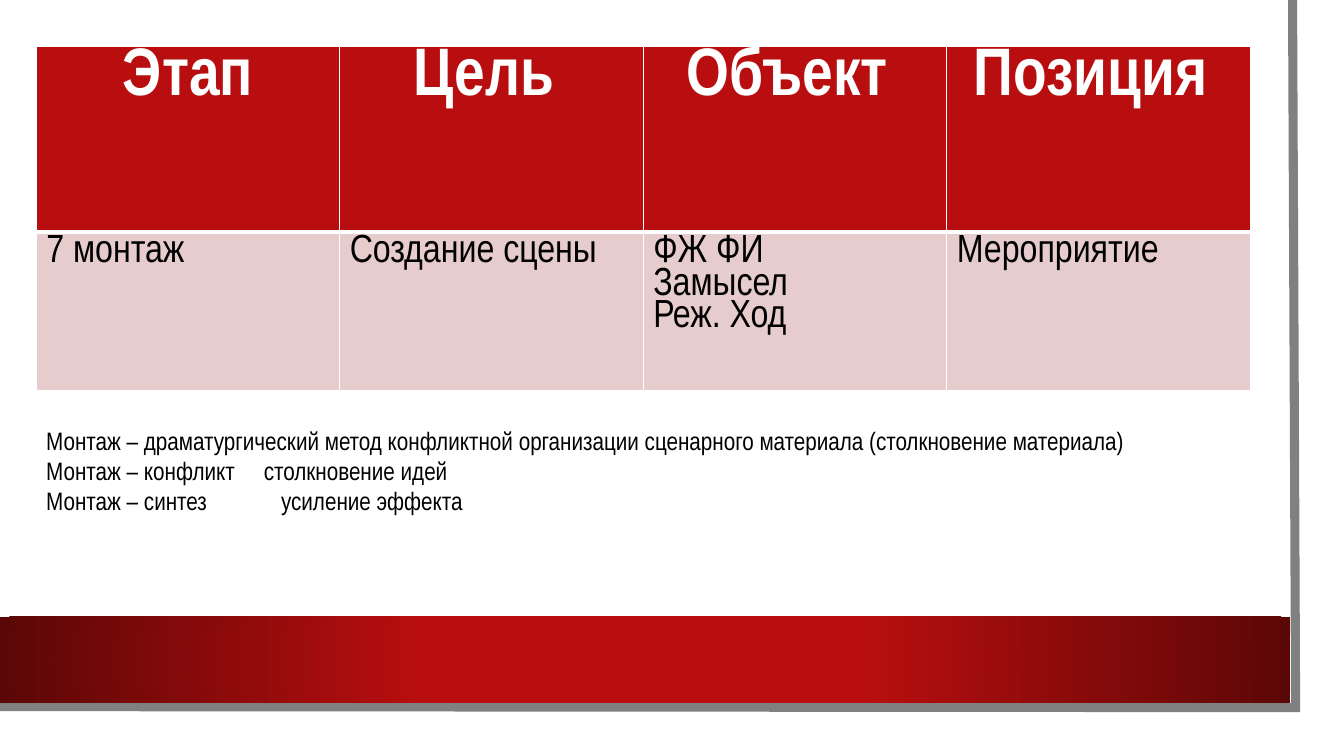
import pptx
import pptx.util
import pptx.dml.color
import pptx.enum.shapes
import pptx.enum.text
import pptx.oxml
import pptx.oxml.ns

Inches = pptx.util.Inches
Pt = pptx.util.Pt
RGB = pptx.dml.color.RGBColor.from_string
ALIGN = pptx.enum.text.PP_ALIGN
RECTANGLE = pptx.enum.shapes.MSO_SHAPE.RECTANGLE
NAMESPACE = pptx.oxml.ns.nsdecls("a")
COLORS = {
    "white": "FFFFFF",
    "black": "000000",
    "frame": "808080",
    "red": "B80E0F",
    "dark red": "5C0707",
    "pink": "E6CCCC",
}


def write(frame, lines, size, color, bold=False, align=ALIGN.LEFT, spacing=None, tabs=()):
    """Fill a text frame with one paragraph per line; tabs gives each line's tab stop in inches."""
    frame.word_wrap = True
    for index, line in enumerate(lines):
        para = frame.paragraphs[0] if index == 0 else frame.add_paragraph()
        para.alignment = align
        if spacing:
            para.line_spacing = spacing
        if tabs and tabs[index]:
            para._p.get_or_add_pPr().append(pptx.oxml.parse_xml(
                f'<a:tabLst {NAMESPACE}><a:tab pos="{Inches(tabs[index])}" algn="l"/></a:tabLst>'))
        span = para.add_run()
        span.text = line
        span.font.name = "Arial Narrow"
        span.font.size = Pt(size)
        span.font.bold = bold
        span.font.color.rgb = RGB(COLORS[color])


deck = pptx.Presentation()
deck.slide_width, deck.slide_height = Inches(13.33), Inches(7.5)
page = deck.slides.add_slide(deck.slide_layouts[6])

# White sheet
sheet = page.shapes.add_shape(RECTANGLE, 0, 0, Inches(13.1), Inches(7.27))
sheet.shadow.inherit = False
sheet.fill.solid()
sheet.fill.fore_color.rgb = RGB(COLORS["white"])
sheet.line.fill.background()

# Grey edge along the right and bottom sides
outline = page.shapes.build_freeform(Inches(12.82), 0)
outline.add_line_segments(
    [(Inches(12.85), Inches(7.02)), (Inches(-0.03), Inches(7.01))], close=False)
edge = outline.convert_to_shape()
edge.shadow.inherit = False
edge.fill.background()
edge.line.color.rgb = RGB(COLORS["frame"])
edge.line.width = Pt(6.5)
edge.line._get_or_add_ln().append(pptx.oxml.parse_xml(f'<a:miter {NAMESPACE} lim="800000"/>'))

# Red band, darker towards both ends
band = page.shapes.add_shape(RECTANGLE, 0, Inches(6.12), Inches(12.8), Inches(0.85))
band.shadow.inherit = False
band.line.fill.background()
band._element.spPr.prstGeom.addnext(pptx.oxml.parse_xml(
    f'<a:gradFill {NAMESPACE}><a:gsLst>'
    f'<a:gs pos="34000"><a:srgbClr val="{COLORS["red"]}"/></a:gs>'
    f'<a:gs pos="100000"><a:srgbClr val="{COLORS["dark red"]}"/></a:gs></a:gsLst>'
    '<a:path path="circle"><a:fillToRect l="50000" t="50000" r="50000" b="50000"/></a:path>'
    '</a:gradFill>'))

# Stage table
rows = [
    [["Этап"], ["Цель "], ["Объект "], ["Позиция "]],
    [["7 монтаж"], ["Создание сцены"], ["ФЖ ФИ", "Замысел", "Реж. Ход"], ["Мероприятие"]],
]
row_formats = [
    {"size": 48, "color": "white", "bold": True, "align": ALIGN.CENTER, "spacing": 0.88},
    {"size": 28, "color": "black", "spacing": 0.88},
]
row_fills = ["red", "pink"]
row_borders = [{"L": 1, "R": 1, "T": 1, "B": 3}, {"L": 1, "R": 1, "T": 3, "B": 1}]
stages = page.shapes.add_table(
    2, 4, Inches(0.36), Inches(0.46), Inches(12.04), Inches(3.42)).table
for column in stages.columns:
    column.width = Inches(3.01)
for row, height in zip(stages.rows, (1.84, 1.58)):
    row.height = Inches(height)
for row_index, texts in enumerate(rows):
    for column_index, lines in enumerate(texts):
        cell = stages.cell(row_index, column_index)
        write(cell.text_frame, lines, **row_formats[row_index])
        properties = cell._tc.get_or_add_tcPr()
        for side, width in row_borders[row_index].items():
            properties.append(pptx.oxml.parse_xml(
                f'<a:ln{side} {NAMESPACE} w="{Pt(width)}"><a:solidFill>'
                f'<a:srgbClr val="{COLORS["white"]}"/></a:solidFill></a:ln{side}>'))
        cell.fill.solid()
        cell.fill.fore_color.rgb = RGB(COLORS[row_fills[row_index]])

# Definitions of montage
box = page.shapes.add_textbox(Inches(0.36), Inches(4.17), Inches(12.04), Inches(1.31))
write(box.text_frame, [
    "Монтаж – драматургический метод конфликтной организации сценарного материала "
    "(столкновение материала)",
    "Монтаж – конфликт\tстолкновение идей",
    "Монтаж – синтез\tусиление эффекта",
], size=18, color="black", tabs=(None, 2.16, 2.33))

deck.save("out.pptx")
